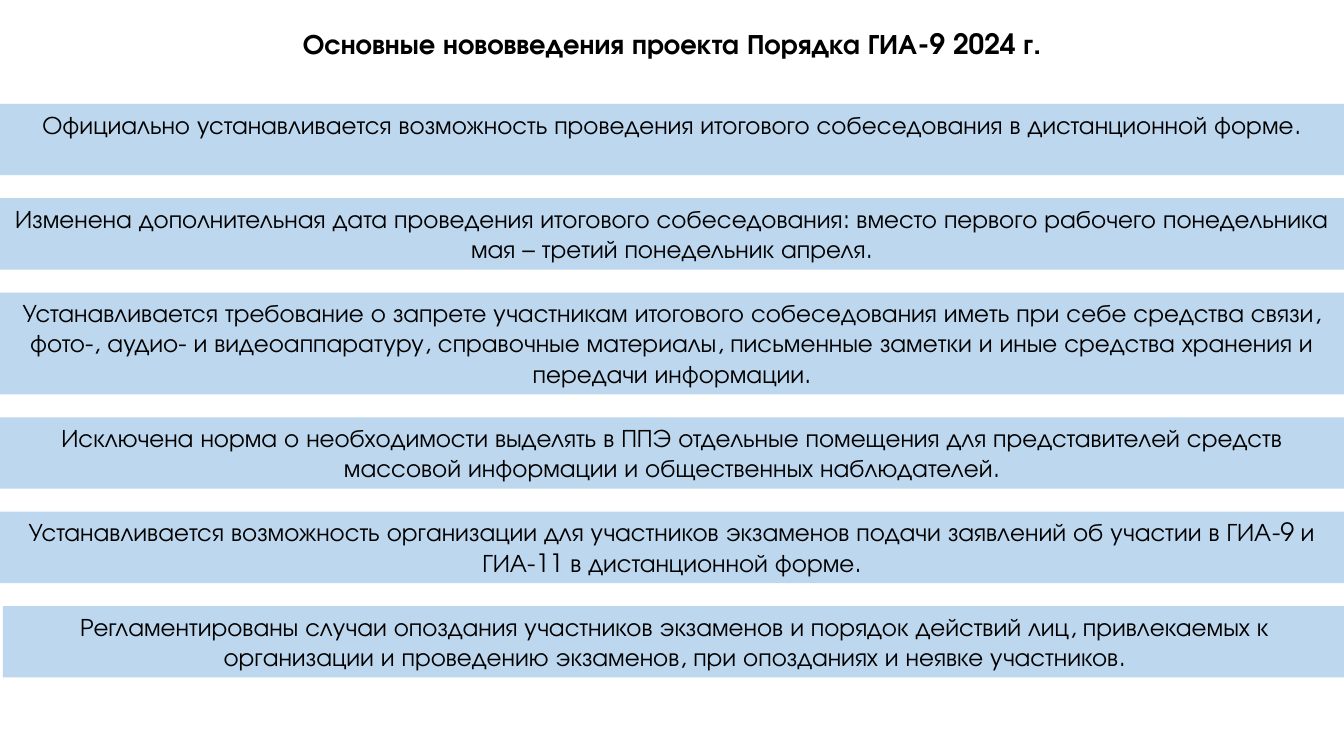
from pptx import Presentation
from pptx.dml.color import RGBColor
from pptx.enum.shapes import MSO_SHAPE as Preset
from pptx.enum.text import MSO_ANCHOR as Anchor, PP_ALIGN as Align
from pptx.util import Pt

TITLE = "Основные нововведения проекта Порядка ГИА-9 2024 г."
# Text, left, height
CHANGES = [
    ("Официально устанавливается возможность проведения итогового собеседования "
     "в дистанционной форме.", 0, 51),
    ("Изменена дополнительная дата проведения итогового собеседования: вместо "
     "первого рабочего понедельника мая – третий понедельник апреля.", 0, 51),
    ("Устанавливается требование о запрете участникам итогового собеседования "
     "иметь при себе средства связи, фото-, аудио- и видеоаппаратуру, справочные "
     "материалы, письменные заметки и иные средства хранения и передачи "
     "информации.", 0, 72.7),
    ("Исключена норма о необходимости выделять в ППЭ отдельные помещения для "
     "представителей средств массовой информации и общественных наблюдателей.",
     0, 51),
    ("Устанавливается возможность организации для участников экзаменов подачи "
     "заявлений об участии в ГИА-9 и ГИА-11 в дистанционной форме.", 0, 51),
    ("Регламентированы случаи опоздания участников экзаменов и порядок действий "
     "лиц, привлекаемых к организации и проведению экзаменов, при опозданиях и "
     "неявке участников.", 2, 51),
]
FONT = "TeX Gyre Adventor"
TEXT_COLOR, BAR_COLOR = "000000", "BDD7EE"
WIDTH, HEIGHT = 960, 540
FIRST_TOP, GAP = 74.2, 16.4


def color(hex_string):
    return RGBColor.from_string(hex_string)


def write_centred(shape, text, size, bold=False):
    frame = shape.text_frame
    frame.word_wrap = True
    frame.vertical_anchor = Anchor.TOP
    paragraph = frame.paragraphs[0]
    paragraph.alignment = Align.CENTER
    run = paragraph.add_run()
    run.text = text
    run.font.name = FONT
    run.font.size = Pt(size)
    run.font.bold = bold
    run.font.color.rgb = color(TEXT_COLOR)


def add_bar(slide, text, left, top, height):
    bar = slide.shapes.add_shape(
        Preset.RECTANGLE, Pt(left), Pt(top), Pt(WIDTH), Pt(height))
    bar.shadow.inherit = False
    bar.fill.solid()
    bar.fill.fore_color.rgb = color(BAR_COLOR)
    bar.line.fill.background()
    write_centred(bar, text, 18)


def main():
    presentation = Presentation()
    presentation.slide_width, presentation.slide_height = Pt(WIDTH), Pt(HEIGHT)
    slide = presentation.slides.add_slide(presentation.slide_layouts[6])

    title = slide.shapes.add_textbox(Pt(0), Pt(15.1), Pt(WIDTH), Pt(31.5))
    write_centred(title, TITLE, 20, bold=True)

    top = FIRST_TOP
    for text, left, height in CHANGES:
        add_bar(slide, text, left, top, height)
        top += height + GAP

    presentation.save("out.pptx")


if __name__ == "__main__":
    main()
